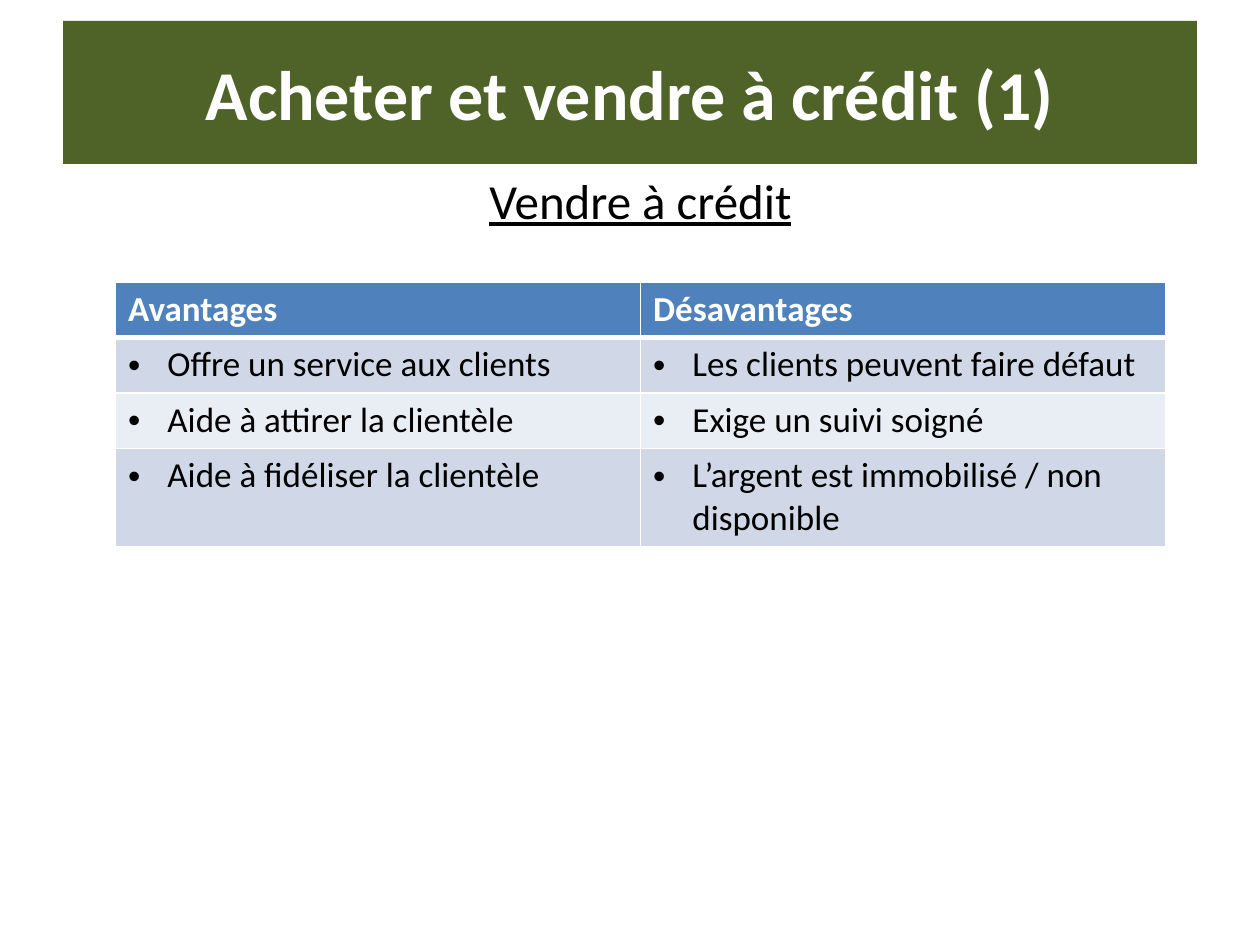
"""Build a slide comparing the advantages and drawbacks of selling on credit."""
from dataclasses import dataclass

from lxml import etree
from pptx import Presentation
from pptx.dml.color import RGBColor
from pptx.enum.text import MSO_ANCHOR, MSO_AUTO_SIZE, PP_ALIGN
from pptx.oxml.ns import qn
from pptx.util import Pt

CENTER, LEFT = PP_ALIGN.CENTER, PP_ALIGN.LEFT
MIDDLE, TOP = MSO_ANCHOR.MIDDLE, MSO_ANCHOR.TOP
NO_AUTOFIT = MSO_AUTO_SIZE.NONE

TITLE = "Acheter et vendre à crédit (1)"
SUBTITLE = "Vendre à crédit"
HEADERS = ("Avantages", "Désavantages")
ARGUMENTS = [
    ("Offre un service aux clients", "Les clients peuvent faire défaut"),
    ("Aide à attirer la clientèle", "Exige un suivi soigné"),
    ("Aide à fidéliser la clientèle", "L’argent est immobilisé / non disponible"),
]

SLIDE_SIZE = (720, 540)
TITLE_BOX = (36, 12, 648, 81.6)
BODY_BOX = (36, 93.6, 660, 405)
TABLE_BOX = (66, 161, 600, 118)
ROW_HEIGHT = 29.2
BULLET_INDENT = 22.5


@dataclass(frozen=True)
class Theme:
    font: str = "Calibri"
    title_size: int = 40
    subtitle_size: int = 28
    table_size: int = 20
    white: str = "FFFFFF"
    black: str = "000000"
    banner: str = "4F6228"
    header: str = "4F81BD"
    bands: tuple = ("D0D8E8", "E9EDF4")
    thin: int = 1
    thick: int = 3


THEME = Theme()


def paint(target, color):
    target.fill.solid()
    target.fill.fore_color.rgb = RGBColor.from_string(color)


def write(frame, text, *, size, color=THEME.black, bold=False,
          underline=False, align=LEFT, bullet=None):
    paragraph = frame.paragraphs[0]
    paragraph.alignment = align
    properties = paragraph._p.get_or_add_pPr()
    indent = Pt(BULLET_INDENT) if bullet else 0
    properties.set("marL", str(indent))
    properties.set("indent", str(-indent))
    if bullet:
        etree.SubElement(properties, qn("a:buFont"), typeface="Arial")
        etree.SubElement(properties, qn("a:buChar"), char=bullet)
    else:
        etree.SubElement(properties, qn("a:buNone"))
    run = paragraph.add_run()
    run.text = text
    font = run.font
    font.name, font.size = THEME.font, Pt(size)
    font.bold, font.underline = bold, underline
    font.color.rgb = RGBColor.from_string(color)


def fill_placeholder(shape, box, text, anchor, **text_format):
    shape.left, shape.top, shape.width, shape.height = map(Pt, box)
    frame = shape.text_frame
    frame.word_wrap = True
    frame.auto_size = NO_AUTOFIT
    frame.vertical_anchor = anchor
    write(frame, text, align=CENTER, **text_format)


def set_borders(cell, **widths):
    properties = cell._tc.get_or_add_tcPr()
    for side in "LRTB":
        width = Pt(widths.get(side, THEME.thin))
        line = etree.SubElement(properties, qn(f"a:ln{side}"), w=str(width))
        fill = etree.SubElement(line, qn("a:solidFill"))
        etree.SubElement(fill, qn("a:srgbClr"), val=THEME.white)


def add_comparison(slide):
    rows = [HEADERS, *ARGUMENTS]
    table = slide.shapes.add_table(len(rows), len(HEADERS), *map(Pt, TABLE_BOX)).table
    for row_index, texts in enumerate(rows):
        table.rows[row_index].height = Pt(ROW_HEIGHT)
        for column_index, text in enumerate(texts):
            cell = table.cell(row_index, column_index)
            if row_index == 0:
                set_borders(cell, B=THEME.thick)
                paint(cell, THEME.header)
                write(cell.text_frame, text, size=THEME.table_size,
                      color=THEME.white, bold=True)
            else:
                set_borders(cell, T=THEME.thick if row_index == 1 else THEME.thin)
                paint(cell, THEME.bands[(row_index - 1) % len(THEME.bands)])
                write(cell.text_frame, text, size=THEME.table_size, bullet="•")


def main():
    presentation = Presentation()
    presentation.slide_width, presentation.slide_height = map(Pt, SLIDE_SIZE)
    slide = presentation.slides.add_slide(presentation.slide_layouts[1])
    title, body = slide.shapes.title, slide.placeholders[1]
    paint(title, THEME.banner)
    fill_placeholder(title, TITLE_BOX, TITLE, MIDDLE,
                     size=THEME.title_size, color=THEME.white, bold=True)
    fill_placeholder(body, BODY_BOX, SUBTITLE, TOP,
                     size=THEME.subtitle_size, underline=True)
    add_comparison(slide)
    presentation.save("out.pptx")


if __name__ == "__main__":
    main()
